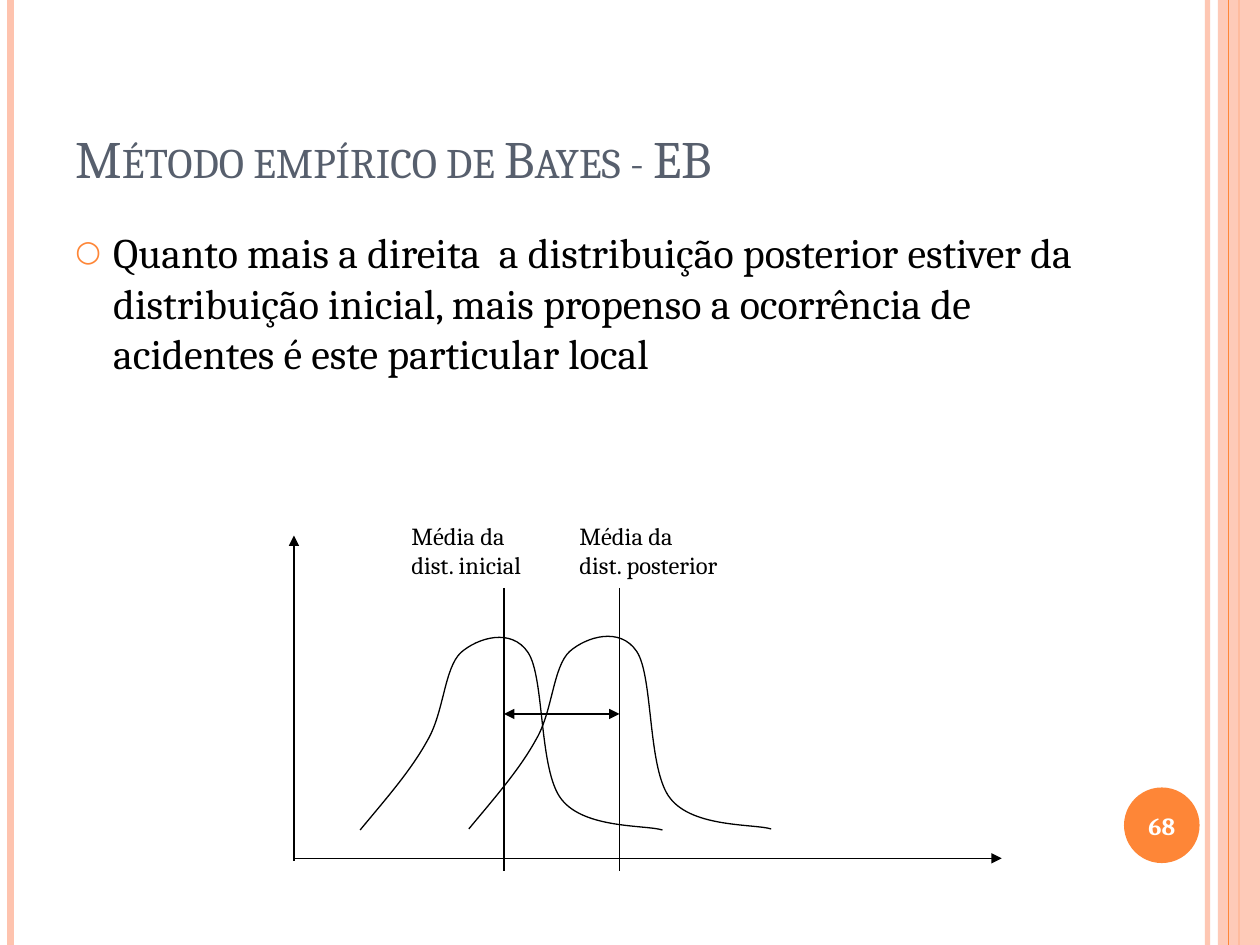
from dataclasses import dataclass

from lxml import etree
from pptx import Presentation
from pptx.dml.color import RGBColor
from pptx.enum.shapes import MSO_CONNECTOR, MSO_SHAPE
from pptx.enum.text import MSO_ANCHOR, PP_ALIGN
from pptx.oxml.ns import qn
from pptx.util import Inches, Pt

STRAIGHT = MSO_CONNECTOR.STRAIGHT
RECTANGLE, OVAL = MSO_SHAPE.RECTANGLE, MSO_SHAPE.OVAL
TOP, MIDDLE, BOTTOM = MSO_ANCHOR.TOP, MSO_ANCHOR.MIDDLE, MSO_ANCHOR.BOTTOM
LEFT, CENTER = PP_ALIGN.LEFT, PP_ALIGN.CENTER

PEACH = RGBColor(0xFE, 0xC3, 0xAE)
ORANGE = RGBColor(0xFE, 0x86, 0x37)
SLATE = RGBColor(0x57, 0x5F, 0x6D)
BLACK = RGBColor(0, 0, 0)
WHITE = RGBColor(0xFF, 0xFF, 0xFF)

FONT = "Cambria"
CELL = Inches(1) // 12
COLUMNS, ROWS = 120, 90
BELL = [
    (2.4, -2.9), (4.8, -5.6), (6.4, -8.5),
    (8, -11.2), (8, -15.4), (9.6, -16.9),
    (11.2, -18.3), (14.4, -19.3), (16, -16.9),
    (17.6, -14.5), (17, -5.6), (19.2, -2.9),
    (21.4, -0.1), (27.2, -0.5), (28.8, 0),
]


@dataclass
class Box:
    left: float
    top: float
    width: float
    height: float

    def inner(self, column, row, width, height):
        return Box(self.left + column, self.top + row, width, height)

    def point(self, column, row):
        return cells(self.left + column), cells(self.top + row)

    def frame(self):
        return [cells(v) for v in (self.left, self.top, self.width, self.height)]


def cells(count):
    return round(count * CELL)


def set_opacity(fill_parent, percent):
    color = fill_parent.find(".//" + qn("a:srgbClr"))
    etree.SubElement(color, qn("a:alpha"), val=str(percent * 1000))


def add_line(shapes, start, end, color=BLACK, weight=0.75, arrows=()):
    line = shapes.add_connector(STRAIGHT, *start, *end)
    line.line.color.rgb = color
    line.line.width = Pt(weight)
    properties = line._element.spPr
    for arrow in arrows:
        etree.SubElement(properties.find(qn("a:ln")), qn("a:" + arrow), type="triangle")
    etree.SubElement(properties, qn("a:effectLst"))
    return line


def add_solid(shapes, kind, box, color):
    solid = shapes.add_shape(kind, *box.frame())
    solid.shadow.inherit = False
    solid.fill.solid()
    solid.fill.fore_color.rgb = color
    solid.line.fill.background()
    return solid


def add_text(shapes, box, text, size, color=BLACK, anchor=TOP, align=LEFT, bold=False):
    frame = shapes.add_textbox(*box.frame()).text_frame
    frame.word_wrap = True
    frame.vertical_anchor = anchor
    paragraph = frame.paragraphs[0]
    paragraph.text = text
    paragraph.alignment = align
    paragraph.font.name = FONT
    paragraph.font.size = Pt(size)
    paragraph.font.color.rgb = color
    paragraph.font.bold = bold
    return paragraph


def add_borders(shapes, page):
    def stripe(column, color, weight):
        return add_line(shapes, page.point(column, 0), page.point(column, page.height), color, weight)

    inner_stripe = stripe(115, PEACH, 3)
    set_opacity(inner_stripe._element.spPr, 93)
    stripe(1, PEACH, 4.5)
    stripe(118, ORANGE, 1.5)
    band = add_solid(shapes, RECTANGLE, page.inner(116, 0, 4, page.height), PEACH)
    set_opacity(band._element.spPr, 87)
    stripe(117, ORANGE, 0.75)


def add_title(shapes, box):
    title = add_text(shapes, box, "Método empírico de Bayes - EB", 30, SLATE, BOTTOM)
    title.runs[0].font._element.set("cap", "small")


def add_body(shapes, box):
    body = add_text(
        shapes, box,
        "Quanto mais a direita  a distribuição posterior estiver da distribuição "
        "inicial, mais propenso a ocorrência de acidentes é este particular local",
        24,
    )
    body.space_before = Pt(6)
    properties = body._element.get_or_add_pPr()
    properties.set("marL", str(Inches(0.3)))
    properties.set("indent", str(-Inches(0.3)))
    bullet_color = etree.Element(qn("a:buClr"))
    etree.SubElement(bullet_color, qn("a:srgbClr"), val=str(ORANGE))
    bullet_size = etree.Element(qn("a:buSzPct"), val="70000")
    bullet_font = etree.Element(qn("a:buFont"), typeface=FONT)
    bullet = etree.Element(qn("a:buChar"), char="○")
    defaults = properties.find(qn("a:defRPr"))
    for part in (bullet_color, bullet_size, bullet_font, bullet):
        defaults.addprevious(part)


def add_bell(shapes, box, column, row):
    builder = shapes.build_freeform(*box.point(column, row))
    builder.add_line_segments(
        [box.point(column + x, row + y) for x, y in BELL], close=False
    )
    bell = builder.convert_to_shape()
    bell.shadow.inherit = False
    bell.fill.background()
    bell.line.color.rgb = BLACK
    bell.line.width = Pt(0.75)
    segments = bell._element.findall(".//" + qn("a:lnTo"))
    for first in range(0, len(segments), 3):
        curve = etree.Element(qn("a:cubicBezTo"))
        segments[first].addprevious(curve)
        for segment in segments[first:first + 3]:
            curve.append(segment[0])
            segment.getparent().remove(segment)


def add_distributions(shapes, box):
    plot = shapes.add_group_shape().shapes
    add_line(plot, box.point(0, 33), box.point(0, 2), arrows=["tailEnd"])
    add_line(plot, box.point(0, 32.75), box.point(box.width, 32.75), arrows=["tailEnd"])
    add_bell(plot, box, 6.3, 30.05)
    add_bell(plot, box, 16.65, 29.95)

    means = (20, 31)
    for mean in means:
        add_line(shapes, box.point(mean, 7), box.point(mean, 34))
    add_text(shapes, box.inner(10, 0, 13.9, 6.8), "Média da dist. inicial", 14)
    add_text(shapes, box.inner(26, 0, 15.7, 6.8), "Média da dist. posterior", 14)
    add_line(shapes, *(box.point(mean, 19) for mean in means), arrows=["headEnd", "tailEnd"])


def add_page_number(shapes, box):
    add_solid(shapes, OVAL, box, ORANGE)
    add_text(shapes, box.inner(-0.4, 0.2, 8, 6.8), "68", 14, WHITE, MIDDLE, CENTER, True)


def main():
    deck = Presentation()
    deck.slide_width, deck.slide_height = cells(COLUMNS), cells(ROWS)
    shapes = deck.slides.add_slide(deck.slide_layouts[6]).shapes
    add_borders(shapes, Box(0, 0, COLUMNS, ROWS))
    add_title(shapes, Box(6, 3.6, 98, 15))
    add_body(shapes, Box(6, 21, 98, 64))
    add_distributions(shapes, Box(28, 49, 67.4, 34))
    add_page_number(shapes, Box(107.05, 75, 7.2, 7.2))
    deck.save("out.pptx")


if __name__ == "__main__":
    main()
